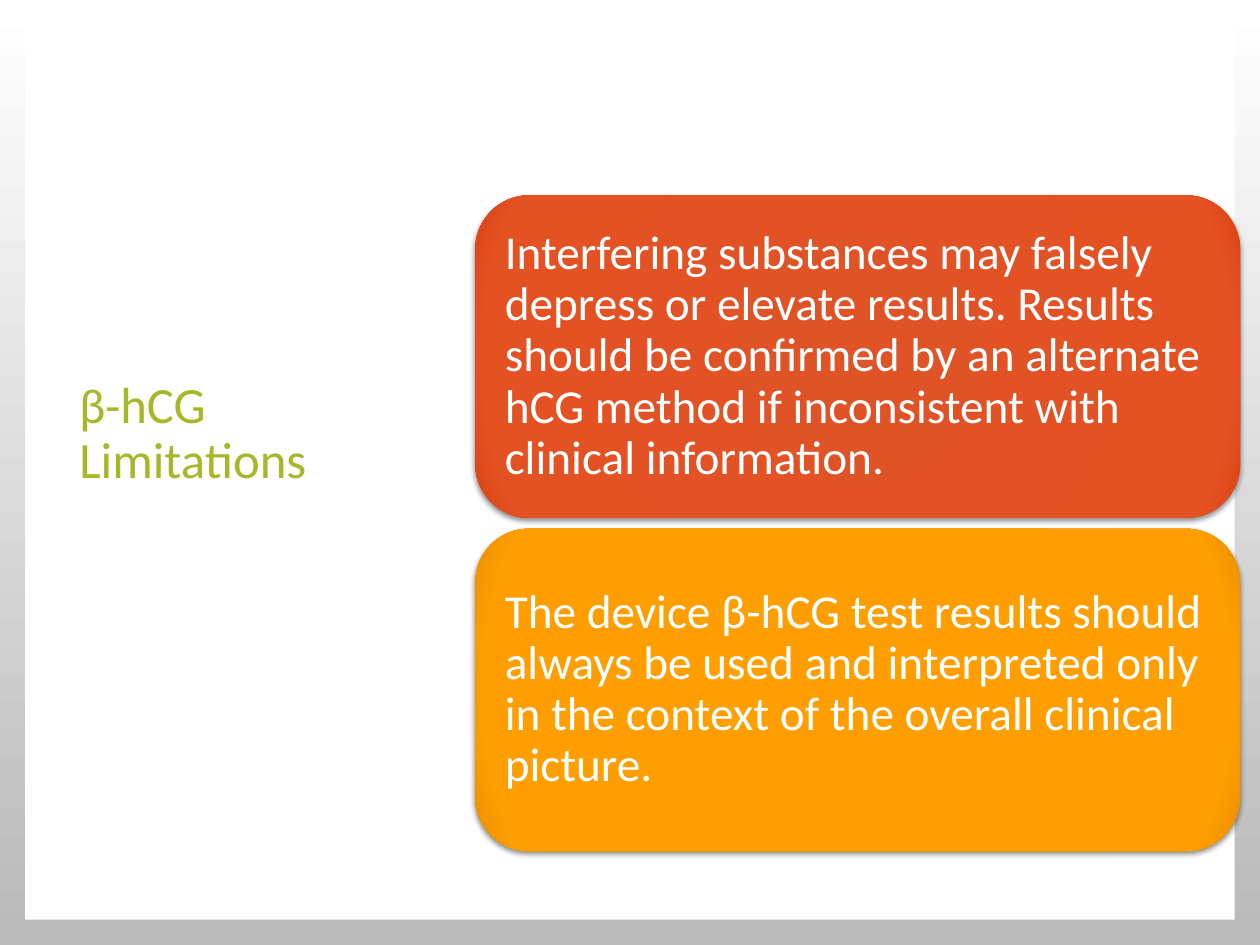
from pptx import Presentation
from pptx.dml.color import RGBColor
from pptx.enum.shapes import MSO_SHAPE
from pptx.enum.text import MSO_ANCHOR, PP_ALIGN
from pptx.oxml import parse_xml
from pptx.oxml.ns import nsdecls, qn
from pptx.util import Cm, Pt

RECTANGLE = MSO_SHAPE.RECTANGLE
ROUNDED = MSO_SHAPE.ROUNDED_RECTANGLE
MIDDLE = MSO_ANCHOR.MIDDLE
LEFT = PP_ALIGN.LEFT

COLORS = {
    "white": "FFFFFF",
    "grey": "B9B9B9",
    "title": "A6B727",
    "shadow": "000000",
    "red": ("DF5327", "E45122", "DB4313"),
    "orange": ("FE9E00", "FE9E00", "E78F00"),
}
STOPS = (0, 90, 100)
CARDS = [
    ("red", "Interfering substances may falsely depress or elevate results. "
            "Results should be confirmed by an alternate hCG method if "
            "inconsistent with clinical information."),
    ("orange", "The device β-hCG test results should always be used and "
               "interpreted only in the context of the overall clinical picture."),
]


def set_background(page):
    """Fill the page with a gradient from white down to grey."""
    fill = page.background.fill
    fill.gradient()
    fill.gradient_angle = 270
    for stop, position, name in zip(fill.gradient_stops, (0, 1), ("white", "grey")):
        stop.position = position
        stop.color.rgb = RGBColor.from_string(COLORS[name])


def add_panel(page, left, top, width, height):
    """Place the plain white panel behind the content."""
    panel = page.shapes.add_shape(RECTANGLE, Cm(left), Cm(top), Cm(width), Cm(height))
    panel.shadow.inherit = False
    panel.fill.solid()
    panel.fill.fore_color.rgb = RGBColor.from_string(COLORS["white"])
    panel.line.fill.background()


def write_text(box, spans, color, inset):
    """Write one left-aligned, vertically centred paragraph of (text, size) spans."""
    frame = box.text_frame
    margins = {f"margin_{side}": Cm(inset) for side in ("left", "top", "right", "bottom")}
    layout = {"word_wrap": True, "vertical_anchor": MIDDLE, **margins}
    for name, value in layout.items():
        setattr(frame, name, value)
    para = frame.paragraphs[0]
    para.alignment = LEFT
    para.line_spacing = 0.9
    for text, size in spans:
        span = para.add_run()
        span.text = text
        for name, value in {"name": "Calibri", "size": Pt(size)}.items():
            setattr(span.font, name, value)
        span.font.color.rgb = RGBColor.from_string(COLORS[color])


def add_title(page, left, top, width, height):
    """Place the slide title."""
    box = page.shapes.add_textbox(Cm(left), Cm(top), Cm(width), Cm(height))
    write_text(box, [("β-", 28), ("hCG Limitations", 29)], "title", 0.25)


def style_card(card, colors):
    """Give a card its circular gradient and soft shadow."""
    stops = "".join(
        f'<a:gs pos="{position * 1000}"><a:srgbClr val="{color}"/></a:gs>'
        for position, color in zip(STOPS, colors))
    gradient = parse_xml(
        f'<a:gradFill {nsdecls("a")} rotWithShape="1"><a:gsLst>{stops}</a:gsLst>'
        '<a:path path="circle"><a:fillToRect l="100000" t="100000" '
        'r="100000" b="100000"/></a:path></a:gradFill>')
    shadow = parse_xml(
        f'<a:outerShdw {nsdecls("a")} blurRad="{Pt(3)}" dist="{Pt(2)}" dir="5400000" '
        f'rotWithShape="0"><a:srgbClr val="{COLORS["shadow"]}">'
        '<a:alpha val="45000"/></a:srgbClr></a:outerShdw>')
    card.fill.background()
    card.line.fill.background()
    card.shadow.inherit = False
    properties = card._element.spPr
    properties.replace(properties.find(qn("a:noFill")), gradient)
    properties.find(qn("a:effectLst")).append(shadow)


def add_cards(page, left, top, width, height, gap):
    """Stack the cards at equal gaps within the given box."""
    card_height = (height - gap * (len(CARDS) - 1)) / len(CARDS)
    for index, (color, text) in enumerate(CARDS):
        card_top = top + index * (card_height + gap)
        card = page.shapes.add_shape(
            ROUNDED, Cm(left), Cm(card_top), Cm(width), Cm(card_height))
        style_card(card, COLORS[color])
        write_text(card, [(text, 27)], "white", 0.28)


def main():
    """Build and save the deck."""
    deck = Presentation()
    deck.slide_width, deck.slide_height = Cm(25.4), Cm(19.05)
    page = deck.slides.add_slide(deck.slide_layouts[6])
    set_background(page)
    add_panel(page, 0.51, 0.51, 24.38, 18.03)
    add_title(page, 1.35, 3.66, 5.92, 10.21)
    add_cards(page, 9.58, 3.94, 15.42, 13.22, 0.22)
    deck.save("out.pptx")


if __name__ == "__main__":
    main()
